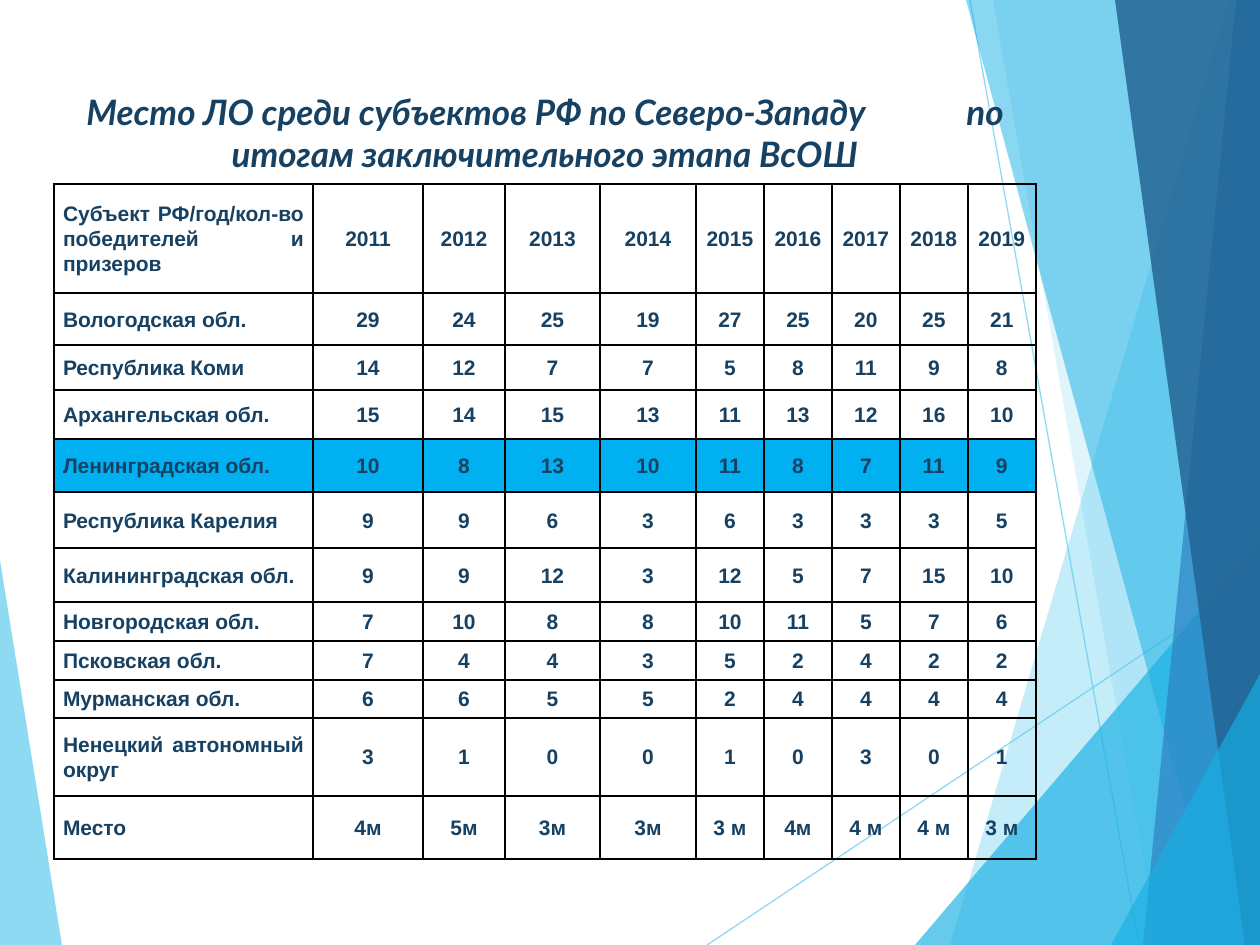
import lxml.etree
import pptx
import pptx.dml.color
import pptx.enum.shapes
import pptx.enum.text
import pptx.oxml
import pptx.oxml.ns
import pptx.util

EMU_PER_PX = 914400 / 126
WIDTH, HEIGHT = 1260, 945
COLORS = {
    "text": "174162", "border": "000000", "highlight": "00B0F0", "sky": "5FCBEF",
    "cyan": "17B0E4", "blue": "2E83C3", "navy": "226292",
}
ALIGN = pptx.enum.text.PP_ALIGN
ANCHOR = pptx.enum.text.MSO_ANCHOR
TITLE_FONT = {"name": "Lato", "size": pptx.util.Pt(20), "bold": True, "italic": True}
CELL_FONT = {"name": "Arial", "size": pptx.util.Pt(12), "bold": True, "italic": False}

LEFT_FACET = ("sky", 70, [(0, 560), (62, 945), (0, 945)])
RAYS = [((707, 945), (1260, 576)), ((970, 0), (1139, 945))]
RIGHT_FACETS = [
    ("sky", 36, [(1229, 0), (950, 945), (1260, 945), (1260, 0)]),
    ("sky", 20, [(993, 0), (1158, 945), (1260, 945), (1260, 0)]),
    ("cyan", 66, [(915, 945), (1260, 540), (1260, 945)]),
    ("cyan", 50, [(966, 0), (1222, 945), (1260, 945), (1260, 0)]),
    ("blue", 70, [(1236, 0), (1143, 945), (1260, 945), (1260, 0)]),
    ("navy", 82, [(1115, 0), (1245, 945), (1260, 945), (1260, 0)]),
    ("cyan", 66, [(1111, 945), (1260, 674), (1260, 945)]),
]

TITLE_PARTS = ["Место ЛО среди субъектов РФ по Северо-Западу", " ", "по итогам заключительного этапа ВсОШ"]
TITLE_GAP_SPACING = 5300
COLUMN_WIDTHS = [259, 110, 82, 95, 96] + [68] * 5
ROW_HEIGHTS = [109, 52, 45, 49, 53, 56, 54, 39, 39, 38, 78, 63]
HIGHLIGHT_ROW = 4
ROWS = [
    ["Субъект РФ/год/кол-во победителей и призеров", *range(2011, 2020)],
    ["Вологодская обл.", 29, 24, 25, 19, 27, 25, 20, 25, 21],
    ["Республика Коми", 14, 12, 7, 7, 5, 8, 11, 9, 8],
    ["Архангельская обл.", 15, 14, 15, 13, 11, 13, 12, 16, 10],
    ["Ленинградская обл.", 10, 8, 13, 10, 11, 8, 7, 11, 9],
    ["Республика Карелия", 9, 9, 6, 3, 6, 3, 3, 3, 5],
    ["Калининградская обл.", 9, 9, 12, 3, 12, 5, 7, 15, 10],
    ["Новгородская обл.", 7, 10, 8, 8, 10, 11, 5, 7, 6],
    ["Псковская обл.", 7, 4, 4, 3, 5, 2, 4, 2, 2],
    ["Мурманская обл.", 6, 6, 5, 5, 2, 4, 4, 4, 4],
    ["Ненецкий автономный округ", 3, 1, 0, 0, 1, 0, 3, 0, 1],
    ["Место", "4м", "5м", "3м", "3м", "3 м", "4м", "4 м", "4 м", "3 м"],
]


def emu(pixels):
    """Turn pixels into EMU."""
    return pptx.util.Emu(round(pixels * EMU_PER_PX))


def color(name):
    """Return the named colour of the palette."""
    return pptx.dml.color.RGBColor.from_string(COLORS[name])


def set_attributes(target, values):
    """Set each attribute in a dict of values."""
    for name, value in values.items():
        setattr(target, name, value)


def add_child(parent, tag, **attributes):
    """Append an XML child with the given attributes."""
    return lxml.etree.SubElement(parent, pptx.oxml.ns.qn(tag), attributes)


def set_opacity(shape, percent):
    """Give every colour in the shape's properties the same opacity."""
    for element in shape._element.spPr.iter(pptx.oxml.ns.qn("a:srgbClr")):
        add_child(element, "a:alpha", val=str(percent * 1000))


def format_run(run, font_values):
    """Apply font values and the text colour to a run."""
    set_attributes(run.font, font_values)
    run.font.color.rgb = color("text")


def add_facet(slide, left, top, name, opacity, points):
    """Draw one translucent polygon."""
    placed = [(left + x, top + y) for x, y in points]
    builder = slide.shapes.build_freeform(*placed[0], scale=EMU_PER_PX)
    builder.add_line_segments(placed[1:], close=True)
    shape = builder.convert_to_shape()
    shape.shadow.inherit = False
    shape.fill.solid()
    shape.fill.fore_color.rgb = color(name)
    shape.line.fill.background()
    set_opacity(shape, opacity)


def add_ray(slide, left, top, start, end):
    """Draw one thin translucent line."""
    ends = [emu(left + start[0]), emu(top + start[1]), emu(left + end[0]), emu(top + end[1])]
    ray = slide.shapes.add_connector(pptx.enum.shapes.MSO_CONNECTOR.STRAIGHT, *ends)
    ray.line.color.rgb = color("sky")
    ray.line.width = pptx.util.Pt(0.75)
    set_opacity(ray, 70)
    add_child(ray._element.spPr, "a:effectLst")


def add_decoration(slide, left, top):
    """Draw the facets and rays behind the content."""
    add_facet(slide, left, top, *LEFT_FACET)
    for ray in RAYS:
        add_ray(slide, left, top, *ray)
    for facet in RIGHT_FACETS:
        add_facet(slide, left, top, *facet)


def place_title(slide, left, top, width, height):
    """Place the title in front of the decoration."""
    title = slide.shapes.title
    set_attributes(title, {"left": emu(left), "top": emu(top), "width": emu(width), "height": emu(height)})
    set_attributes(title.text_frame, {
        "word_wrap": True, "vertical_anchor": ANCHOR.TOP, "auto_size": pptx.enum.text.MSO_AUTO_SIZE.NONE,
    })
    paragraph = title.text_frame.paragraphs[0]
    paragraph.alignment = ALIGN.CENTER
    for text in TITLE_PARTS:
        run = paragraph.add_run()
        run.text = text
        format_run(run, TITLE_FONT)
    gap_run = paragraph.runs[1]
    gap_run.font._element.set("spc", str(TITLE_GAP_SPACING))
    slide.shapes._spTree.append(title._element)


def add_borders(cell):
    """Draw a border on the four sides of a cell."""
    properties = cell._tc.get_or_add_tcPr()
    for side in ("a:lnL", "a:lnR", "a:lnT", "a:lnB"):
        line = add_child(properties, side, w=str(pptx.util.Pt(1)))
        add_child(add_child(line, "a:solidFill"), "a:srgbClr", val=COLORS["border"])


def fill_cell(cell, value, alignment, highlighted):
    """Write and format one table cell."""
    set_attributes(cell, {
        "text": str(value), "vertical_anchor": ANCHOR.MIDDLE,
        "margin_left": emu(9), "margin_right": emu(9), "margin_top": 0, "margin_bottom": 0,
    })
    paragraph = cell.text_frame.paragraphs[0]
    set_attributes(paragraph, {"alignment": alignment, "line_spacing": 1.07})
    format_run(paragraph.runs[0], CELL_FONT)
    add_borders(cell)
    if highlighted:
        cell.fill.solid()
        cell.fill.fore_color.rgb = color("highlight")
    else:
        cell.fill.background()


def add_results_table(slide, left, top):
    """Add the table of results by region and year."""
    box = [emu(length) for length in (left, top, sum(COLUMN_WIDTHS), sum(ROW_HEIGHTS))]
    table = slide.shapes.add_table(len(ROWS), len(COLUMN_WIDTHS), *box).table
    set_attributes(table, {"first_row": False, "horz_banding": False})
    for column, width in zip(table.columns, COLUMN_WIDTHS):
        column.width = emu(width)
    for row, height in zip(table.rows, ROW_HEIGHTS):
        row.height = emu(height)
    for row_index, values in enumerate(ROWS):
        for column_index, value in enumerate(values):
            alignment = ALIGN.CENTER if column_index else ALIGN.JUSTIFY
            fill_cell(table.cell(row_index, column_index), value, alignment, row_index == HIGHLIGHT_ROW)


def main():
    """Build and save the presentation."""
    presentation = pptx.Presentation()
    set_attributes(presentation, {"slide_width": emu(WIDTH), "slide_height": emu(HEIGHT)})
    slide = presentation.slides.add_slide(presentation.slide_layouts[5])
    add_decoration(slide, 0, 0)
    place_title(slide, 54, 84, 982, 140)
    add_results_table(slide, 54, 184)
    presentation.save("out.pptx")


if __name__ == "__main__":
    main()
